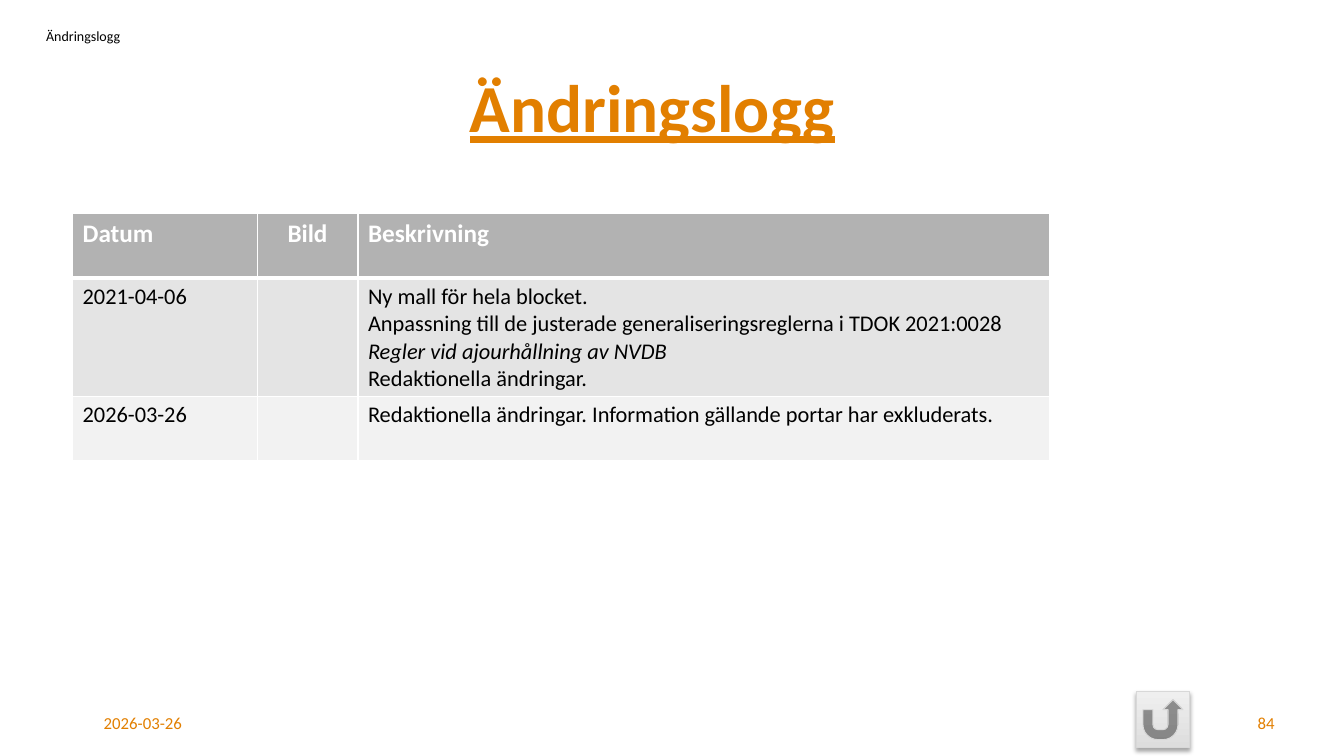
import pptx
import pptx.util
import pptx.dml.color
import pptx.enum.shapes
import pptx.enum.text
import pptx.oxml
import pptx.oxml.ns

ORANGE, WHITE, BLACK = "E27F00", "FFFFFF", "000000"
ROW_FILLS = ["B2B2B2", "E4E4E4", "F2F2F2"]
COL_WIDTHS = [1.83, 1, 6.86]
ROW_HEIGHTS = [0.64, 1.17, 0.64]
RULE_NOTE = "Regler vid ajourhållning av NVDB"
LOG = [
    ["Datum", "Bild", "Beskrivning"],
    ["2021-04-06", "", "Ny mall för hela blocket.\n"
     "Anpassning till de justerade generaliseringsreglerna i TDOK 2021:0028 "
     + RULE_NOTE + "\nRedaktionella ändringar."],
    ["2026-03-26", "",
     "Redaktionella ändringar. Information gällande portar har exkluderats."],
]
ALIGN = pptx.enum.text.PP_ALIGN


def rgb(color):
    """Turn a hex string into a colour."""
    return pptx.dml.color.RGBColor.from_string(color)


def inches(*lengths):
    """Convert lengths to a list of EMU values."""
    return [pptx.util.Inches(x) for x in lengths]


def format_run(r, size, color, bold=False):
    """Apply the slide's typeface, size, colour and weight."""
    r.font.name = "Calibri"
    r.font.size = pptx.util.Pt(size)
    r.font.bold = bold
    r.font.color.rgb = rgb(color)


def add_title(s, box, text):
    """Place the underlined slide title."""
    sp = s.shapes.title
    sp.left, sp.top, sp.width, sp.height = inches(*box)
    tf = sp.text_frame
    tf.text = text
    tf.auto_size = pptx.enum.text.MSO_AUTO_SIZE.NONE
    tf.vertical_anchor = pptx.enum.text.MSO_ANCHOR.TOP
    tf.margin_top = pptx.util.Inches(0.08)
    p = tf.paragraphs[0]
    p.alignment = ALIGN.CENTER
    format_run(p.runs[0], 48, ORANGE, True)
    p.runs[0].font.underline = True


def add_label(s, box, text, size, color, align=ALIGN.LEFT):
    """Place a single-line label."""
    tf = s.shapes.add_textbox(*inches(*box)).text_frame
    tf.word_wrap = True
    tf.text = text
    p = tf.paragraphs[0]
    p.alignment = align
    format_run(p.runs[0], size, color)


def set_borders(cell, bottom):
    """Draw white cell borders with the given bottom width."""
    tcPr = cell._tc.get_or_add_tcPr()
    for i, (side, width) in enumerate(zip("LRTB", (1, 1, 1, bottom))):
        tcPr.insert(i, pptx.oxml.parse_xml(
            f'<a:ln{side} {pptx.oxml.ns.nsdecls("a")} w="{pptx.util.Pt(width)}">'
            f'<a:solidFill><a:srgbClr val="{WHITE}"/></a:solidFill></a:ln{side}>'))


def fill_cell(cell, text, fill, header):
    """Write and format one cell of the log."""
    cell.fill.solid()
    cell.fill.fore_color.rgb = rgb(fill)
    set_borders(cell, 3 if header else 1)
    cell.text_frame.text = text
    for p in cell.text_frame.paragraphs:
        if p.text.endswith(RULE_NOTE):
            p.text = p.text.removesuffix(RULE_NOTE)
            r = p.add_run()
            r.text = RULE_NOTE
            r.font.italic = True
        for r in p.runs:
            format_run(r, 18 if header else 16, WHITE if header else BLACK, header)


def add_log(s, left, top):
    """Place the change log table."""
    box = inches(left, top, sum(COL_WIDTHS), sum(ROW_HEIGHTS))
    table = s.shapes.add_table(len(LOG), len(COL_WIDTHS), *box).table
    for col, width in zip(table.columns, inches(*COL_WIDTHS)):
        col.width = width
    for row, height in zip(table.rows, inches(*ROW_HEIGHTS)):
        row.height = height
    for i, row in enumerate(LOG):
        for j, text in enumerate(row):
            fill_cell(table.cell(i, j), text, ROW_FILLS[i], i == 0)
    table.cell(0, 1).text_frame.paragraphs[0].alignment = ALIGN.CENTER


def add_return_button(s, box):
    """Place the shaded return button."""
    kind = pptx.enum.shapes.MSO_SHAPE.ACTION_BUTTON_RETURN
    sp = s.shapes.add_shape(kind, *inches(*box))
    sp.fill.gradient()
    sp.fill.gradient_angle = 90
    for stop, position, color in zip(sp.fill.gradient_stops, (0, 1), ("DDDDDD", "EFEFEF")):
        stop.position = position
        stop.color.rgb = rgb(color)
    sp.line.color.rgb = rgb("D8D8D8")
    sp.line.width = pptx.util.Pt(0.75)
    sp.shadow.inherit = False
    effects = sp._element.spPr.find(pptx.oxml.ns.qn("a:effectLst"))
    effects.append(pptx.oxml.parse_xml(
        f'<a:outerShdw {pptx.oxml.ns.nsdecls("a")} blurRad="{pptx.util.Pt(3.1)}" '
        f'dist="{pptx.util.Pt(1.8)}" dir="5400000" rotWithShape="0">'
        f'<a:srgbClr val="{BLACK}"><a:alpha val="35000"/></a:srgbClr></a:outerShdw>'))


def main():
    """Build and save the change log slide."""
    prs = pptx.Presentation()
    prs.slide_width, prs.slide_height = inches(13.33, 7.5)
    s = prs.slides.add_slide(prs.slide_layouts[5])
    add_title(s, (1.12, 0.57, 10.7, 0.71), "Ändringslogg")
    add_label(s, (0.93, 7.02, 1.41, 0.4), "2026-03-26", 12, ORANGE)
    add_label(s, (11.06, 7.02, 1.68, 0.4), "84", 12, ORANGE, ALIGN.RIGHT)
    add_log(s, 0.72, 2.12)
    add_return_button(s, (11.27, 6.86, 0.53, 0.56))
    add_label(s, (0.36, 0.22, 1.47, 0.27), "Ändringslogg", 10, BLACK)
    prs.save("out.pptx")


if __name__ == "__main__":
    main()
